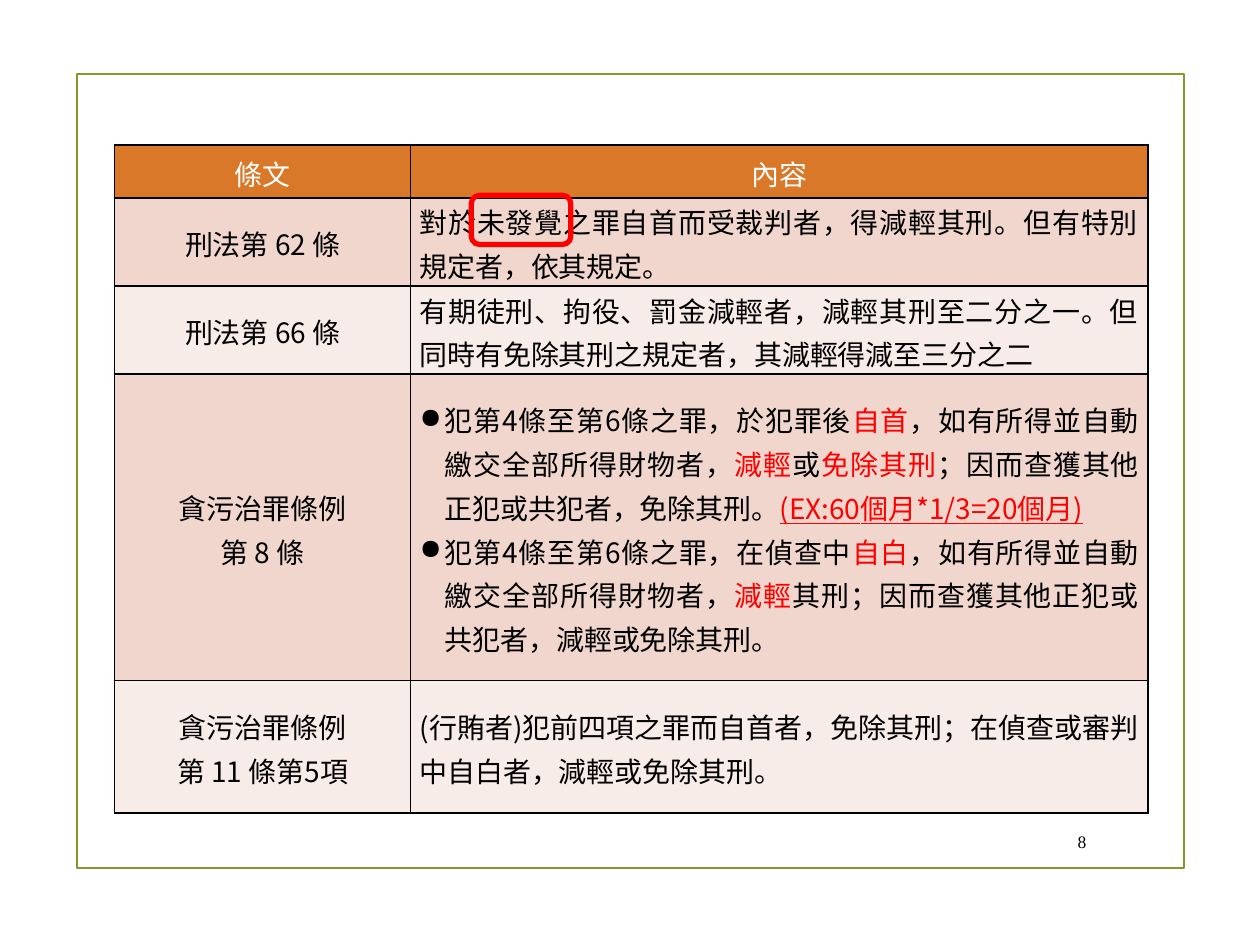
from pptx import Presentation
from pptx.dml.color import RGBColor
from pptx.enum.shapes import MSO_SHAPE
from pptx.enum.text import MSO_ANCHOR, PP_ALIGN
from pptx.oxml import parse_xml
from pptx.oxml.ns import nsdecls
from pptx.util import Inches, Pt

COLORS = {
    "frame": "83992A",
    "header": "D97828",
    "dark_band": "F1D6CD",
    "light_band": "F8ECE8",
    "black": "000000",
    "white": "FFFFFF",
    "red": "FF0000",
}
CJK_FONT = "Noto Sans CJK SC"
NUMBER_FONT = "Times New Roman"
COLUMN_WIDTHS = [2.35, 5.85]
ROW_HEIGHTS = [0.42, 0.7, 0.7, 2.43, 1.05]
BULLET_INDENT = 0.2

SURRENDER_RULE = [
    ("犯第4條至第6條之罪，於犯罪後", "black"),
    ("自首", "red"),
    ("，如有所得並自動繳交全部所得財物者，", "black"),
    ("減輕", "red"),
    ("或", "black"),
    ("免除其刑", "red"),
    ("；因而查獲其他正犯或共犯者，免除其刑。", "black"),
    ("(EX:60個月*1/3=20個月)", "red", True),
]
CONFESSION_RULE = [
    ("犯第4條至第6條之罪，在偵查中", "black"),
    ("自白", "red"),
    ("，如有所得並自動繳交全部所得財物者，", "black"),
    ("減輕", "red"),
    ("其刑；因而查獲其他正犯或共犯者，減輕或免除其刑。", "black"),
]
ARTICLES = [
    (["刑法第 62 條"],
     [[("對於未發覺之罪自首而受裁判者，得減輕其刑。但有特別規定者，依其規定。", "black")]]),
    (["刑法第 66 條"],
     [[("有期徒刑、拘役、罰金減輕者，減輕其刑至二分之一。"
        "但同時有免除其刑之規定者，其減輕得減至三分之二", "black")]]),
    (["貪污治罪條例", "第 8 條"], [SURRENDER_RULE, CONFESSION_RULE]),
    (["貪污治罪條例", "第 11 條第5項"],
     [[("(行賄者)犯前四項之罪而自首者，免除其刑；在偵查或審判中自白者，減輕或免除其刑。", "black")]]),
]


def rgb(name):
    """Return the palette colour called name."""
    return RGBColor.from_string(COLORS[name])


def add_run(paragraph, text, color, underline=False, size=16, font_name=CJK_FONT):
    """Append one formatted run to a paragraph."""
    run = paragraph.add_run()
    run.text = text
    run.font.size = Pt(size)
    run.font.name = font_name
    run.font.color.rgb = rgb(color)
    if underline:
        run.font.underline = True
    east_asian = parse_xml(f'<a:ea {nsdecls("a")} typeface="{font_name}"/>')
    run.font._element.find("{*}latin").addnext(east_asian)


def add_bullet(paragraph):
    """Give a paragraph a round bullet with a hanging indent."""
    properties = paragraph._p.get_or_add_pPr()
    properties.set("marL", str(Inches(BULLET_INDENT)))
    properties.set("indent", str(-Inches(BULLET_INDENT)))
    properties.append(parse_xml(f'<a:buChar {nsdecls("a")} char="●"/>'))


def add_borders(cell):
    """Draw a thin black border on all four sides of a cell."""
    properties = cell._tc.get_or_add_tcPr()
    for position, side in enumerate(("lnL", "lnR", "lnT", "lnB")):
        properties.insert(position, parse_xml(
            f'<a:{side} {nsdecls("a")} w="{Pt(1)}"><a:solidFill>'
            f'<a:srgbClr val="{COLORS["black"]}"/></a:solidFill></a:{side}>'))


def fill_cell(cell, paragraphs, fill, alignment, bulleted=False):
    """Format a cell and write its paragraphs, each a list of runs."""
    cell.fill.solid()
    cell.fill.fore_color.rgb = rgb(fill)
    add_borders(cell)
    cell.vertical_anchor = MSO_ANCHOR.MIDDLE
    cell.margin_left = cell.margin_right = Inches(0.07)
    cell.margin_top = cell.margin_bottom = 0
    for index, runs in enumerate(paragraphs):
        text_frame = cell.text_frame
        paragraph = text_frame.add_paragraph() if index else text_frame.paragraphs[0]
        paragraph.alignment = alignment
        paragraph.line_spacing = Pt(25)
        if bulleted:
            add_bullet(paragraph)
        for run in runs:
            add_run(paragraph, *run)


def add_articles_table(slide):
    """Add the table of articles and their content."""
    table = slide.shapes.add_table(
        len(ROW_HEIGHTS), len(COLUMN_WIDTHS), Inches(0.91), Inches(1.15),
        Inches(sum(COLUMN_WIDTHS)), Inches(sum(ROW_HEIGHTS))).table
    for column, width in zip(table.columns, COLUMN_WIDTHS):
        column.width = Inches(width)
    for row, height in zip(table.rows, ROW_HEIGHTS):
        row.height = Inches(height)
    for index, heading in enumerate(("條文", "內容")):
        fill_cell(table.cell(0, index), [[(heading, "white")]], "header", PP_ALIGN.CENTER)
    for index, (titles, rules) in enumerate(ARTICLES, start=1):
        band = "dark_band" if index % 2 else "light_band"
        title_runs = [[(title, "black")] for title in titles]
        fill_cell(table.cell(index, 0), title_runs, band, PP_ALIGN.CENTER)
        fill_cell(table.cell(index, 1), rules, band, PP_ALIGN.JUSTIFY, len(rules) > 1)


def add_outline(slide, preset, left, top, width, height, color, weight):
    """Add an unfilled shape with a coloured outline."""
    shape = slide.shapes.add_shape(
        preset, Inches(left), Inches(top), Inches(width), Inches(height))
    shape.shadow.inherit = False
    shape.fill.background()
    shape.line.color.rgb = rgb(color)
    shape.line.width = Pt(weight)


def add_slide_number(slide, number):
    """Add the slide number at the lower right."""
    text_box = slide.shapes.add_textbox(
        Inches(8.29), Inches(6.52), Inches(0.43), Inches(0.31))
    text_frame = text_box.text_frame
    text_frame.word_wrap = True
    text_frame.vertical_anchor = MSO_ANCHOR.MIDDLE
    paragraph = text_frame.paragraphs[0]
    paragraph.alignment = PP_ALIGN.RIGHT
    add_run(paragraph, number, "black", size=10, font_name=NUMBER_FONT)


def main():
    """Build the slide and save it."""
    presentation = Presentation()
    presentation.slide_width = Inches(10)
    presentation.slide_height = Inches(7.5)
    slide = presentation.slides.add_slide(presentation.slide_layouts[6])
    add_outline(slide, MSO_SHAPE.RECTANGLE, 0.61, 0.59, 8.79, 6.3, "frame", 1.25)
    add_slide_number(slide, "8")
    add_articles_table(slide)
    add_outline(slide, MSO_SHAPE.ROUNDED_RECTANGLE, 3.74, 1.55, 0.79, 0.39, "red", 3)
    presentation.save("out.pptx")


if __name__ == "__main__":
    main()
